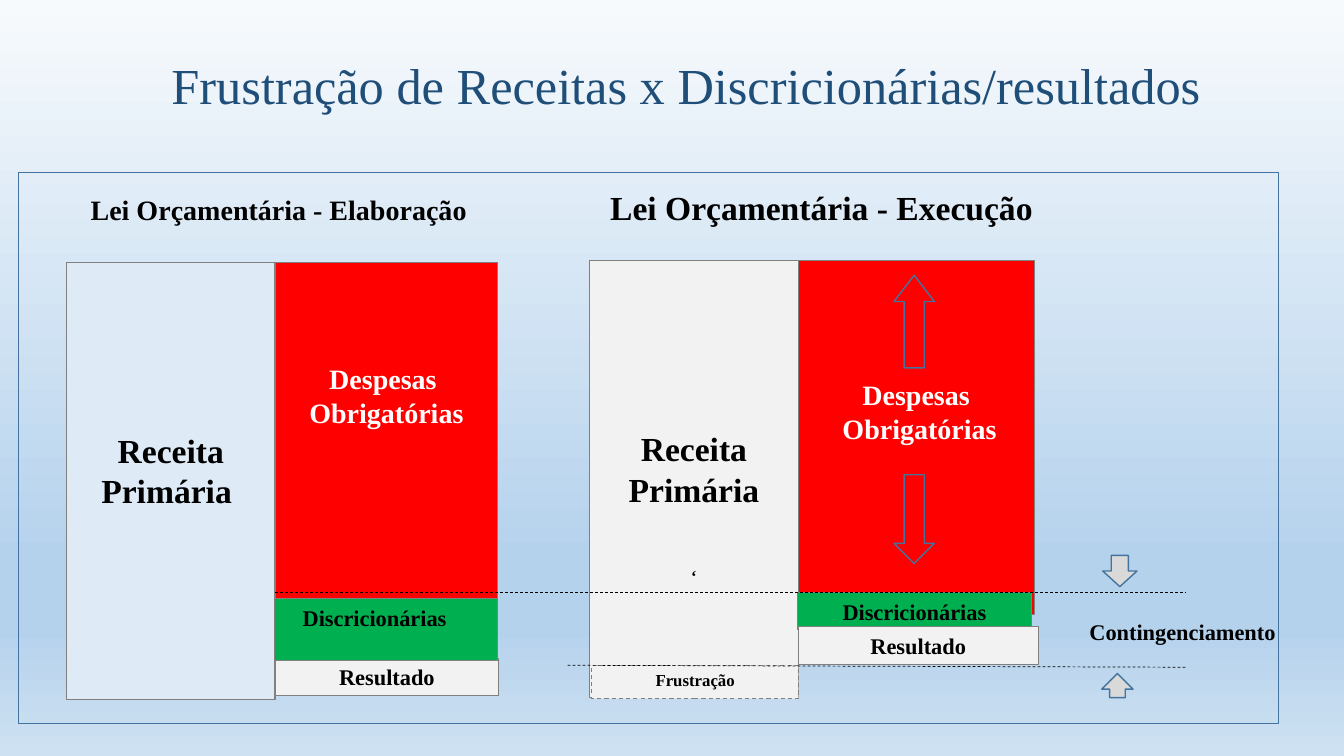
from lxml import etree
from pptx import Presentation
from pptx.dml.color import RGBColor
from pptx.enum.dml import MSO_LINE
from pptx.enum.shapes import MSO_CONNECTOR, MSO_SHAPE
from pptx.enum.text import MSO_ANCHOR, PP_ALIGN
from pptx.oxml.ns import qn
from pptx.util import Pt

RECT, DOWN = MSO_SHAPE.RECTANGLE, MSO_SHAPE.DOWN_ARROW
STRAIGHT, DASH = MSO_CONNECTOR.STRAIGHT, MSO_LINE.DASH
LEFT, CENTER = PP_ALIGN.LEFT, PP_ALIGN.CENTER
TOP, MIDDLE = MSO_ANCHOR.TOP, MSO_ANCHOR.MIDDLE

COLORS = {
    "title": "1F4E79", "black": "000000", "white": "FFFFFF",
    "edge": "43739E", "bar_edge": "808080", "arrow": "D9D9D9",
    "revenue": "DEEBF7", "neutral": "F2F2F2",
    "mandatory": "FF0000", "discretionary": "00B050",
}
BACKDROP = [(0, "F7FAFD"), (74, "B5D2EC"), (83, "B5D2EC"), (100, "CEE1F2")]


def rgb(name):
    return RGBColor.from_string(COLORS[name])


class BudgetSlide:
    font_name = "Times New Roman"

    def __init__(self, slide):
        self.slide = slide

    def backdrop(self, stops):
        fill = self.slide.background.fill
        fill.gradient()
        fill.gradient_angle = 270
        stop_list = next(self.slide.element.iter(qn("a:gsLst")))
        for old_stop in list(stop_list):
            stop_list.remove(old_stop)
        for percent, color in stops:
            stop = etree.SubElement(stop_list, qn("a:gs"), pos=str(percent * 1000))
            etree.SubElement(stop, qn("a:srgbClr"), val=color)

    def add_lines(self, shape, lines, size, color="black", bold=True, align=CENTER,
                  anchor=TOP, top=3.6, right=7.2):
        frame = shape.text_frame
        frame_format = {"word_wrap": True, "vertical_anchor": anchor,
                        "margin_top": Pt(top), "margin_right": Pt(right)}
        for attribute, value in frame_format.items():
            setattr(frame, attribute, value)
        font_format = {"name": self.font_name, "size": Pt(size), "bold": bold}
        for index, line in enumerate(lines):
            paragraph = frame.add_paragraph() if index else frame.paragraphs[0]
            paragraph.alignment = align
            run = paragraph.add_run()
            run.text = line
            for attribute, value in font_format.items():
                setattr(run.font, attribute, value)
            run.font.color.rgb = rgb(color)
        return frame

    def label(self, box, text, size, **style):
        textbox = self.slide.shapes.add_textbox(*map(Pt, box))
        return self.add_lines(textbox, [text], size, **style)

    def shape(self, kind, box, fill, edge, width, dash=None):
        shape = self.slide.shapes.add_shape(kind, *map(Pt, box))
        shape.shadow.inherit = False
        if fill:
            shape.fill.solid()
            shape.fill.fore_color.rgb = rgb(fill)
        else:
            shape.fill.background()
        shape.line.color.rgb = rgb(edge)
        shape.line.width = Pt(width)
        shape.line.dash_style = dash
        return shape

    def bar(self, box, fill, lines, size, dash=None, **style):
        bar = self.shape(RECT, box, fill, "bar_edge", 0.75, dash)
        return self.add_lines(bar, lines, size, **style)

    def arrow(self, box, fill=None, up=False):
        arrow = self.shape(DOWN, box, fill, "edge", 1)
        if up:
            arrow.rotation = 180
            arrow.adjustments[1] = 0.65

    def dashed_line(self, *ends):
        line = self.slide.shapes.add_connector(STRAIGHT, *map(Pt, ends))
        line.line.color.rgb = rgb("black")
        line.line.width = Pt(0.5)
        line.line.dash_style = DASH
        etree.SubElement(line.element.spPr, qn("a:effectLst"))


def main():
    prs = Presentation()
    prs.slide_width, prs.slide_height = Pt(960), Pt(540)
    budget = BudgetSlide(prs.slides.add_slide(prs.slide_layouts[6]))

    # Background, title and frame
    budget.backdrop(BACKDROP)
    budget.label((0, 32.4, 980.6, 55.4),
                 "Frustração de Receitas x Discricionárias/resultados", 36,
                 color="title", bold=False, anchor=MIDDLE)
    budget.shape(RECT, (13.4, 123.1, 900, 393.8), None, "edge", 1)

    # Budget as drafted
    budget.label((47.5, 133.9, 308.2, 31.7), "Lei Orçamentária - Elaboração ", 20)
    budget.bar((47.5, 187.2, 149, 312.5), "revenue", ["Receita Primária "], 24, top=120)
    budget.bar((196.5, 187.2, 159.2, 242.6), "mandatory",
               ["Despesas ", "Obrigatórias"], 20, color="white", top=71)
    budget.bar((196.5, 470.2, 159.8, 26.6), "neutral", ["Resultado"], 16)
    budget.bar((196, 427.7, 159.2, 43.9), "discretionary", ["Discricionárias"], 16,
               right=23)

    # Budget as executed
    budget.label((421.2, 130.3, 331.2, 36), "Lei Orçamentária - Execução", 24)
    revenue = budget.bar((421.2, 185.8, 149, 312.5), "neutral",
                         ["Receita Primária", "‘"], 24, top=120)
    quote_mark = revenue.paragraphs[1]
    quote_mark.space_before = Pt(41)
    quote_mark.runs[0].font.size = Pt(12)
    budget.bar((570.2, 185.8, 168.5, 253.4), "mandatory",
               ["Despesas", " Obrigatórias"], 20, color="white", top=84)
    budget.bar((569.7, 423.4, 167, 26.6), "discretionary", ["Discricionárias"], 16)
    budget.bar((422.8, 475.2, 147.6, 23.8), "neutral", ["Frustração"], 12, dash=DASH)

    # Pressure on mandatory spending
    budget.arrow((638.6, 339.1, 28.8, 63.4))
    budget.arrow((638.6, 196.6, 28.8, 66.2), up=True)

    # Spending freeze between the two levels
    budget.arrow((787.7, 396.7, 24.5, 22.3), "arrow")
    budget.arrow((787, 481, 22.3, 17.3), "arrow", up=True)
    budget.dashed_line(405.4, 475.2, 847.4, 476.6)
    budget.label((771.1, 437.8, 169.9, 26.6), "Contingenciamento", 16, align=LEFT)
    budget.bar((570.2, 447.8, 171.4, 26.6), "neutral", ["Resultado"], 16)
    budget.dashed_line(196.6, 423.4, 847.4, 423.4)

    prs.save("out.pptx")


if __name__ == "__main__":
    main()
